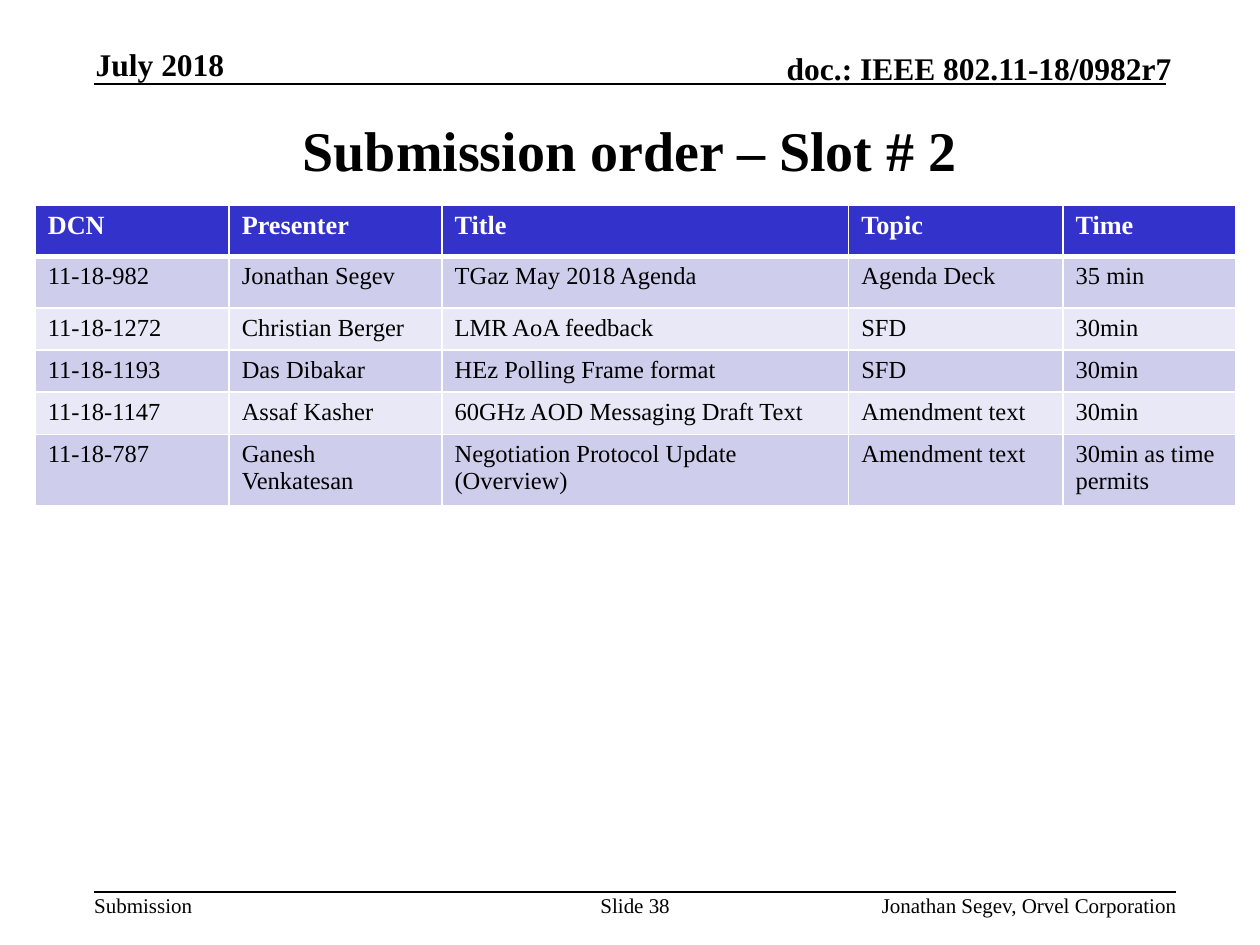
from lxml import etree
from pptx import Presentation
from pptx.dml.color import RGBColor
from pptx.enum.shapes import MSO_CONNECTOR
from pptx.enum.text import MSO_ANCHOR, MSO_AUTO_SIZE, PP_ALIGN
from pptx.oxml.ns import qn
from pptx.util import Cm, Pt

LEFT, CENTER, RIGHT = PP_ALIGN.LEFT, PP_ALIGN.CENTER, PP_ALIGN.RIGHT
TOP, MIDDLE, BOTTOM = MSO_ANCHOR.TOP, MSO_ANCHOR.MIDDLE, MSO_ANCHOR.BOTTOM
STRAIGHT = MSO_CONNECTOR.STRAIGHT
NO_AUTOFIT = MSO_AUTO_SIZE.NONE

FONT = "Times New Roman"
COLORS = {
    "text": "000000",
    "header_text": "FFFFFF",
    "header": "3333CC",
    "odd_row": "CECEEC",
    "even_row": "E8E8F6",
    "border": "FFFFFF",
}
COLUMN_WIDTHS = [3.91, 4.29, 8.2, 4.32, 3.48]
ROW_HEIGHTS = [1.04, 1.04, 0.8, 0.8, 0.8, 1.34]
SUBMISSIONS = [
    ["DCN", "Presenter", "Title", "Topic", "Time"],
    ["11-18-982", "Jonathan Segev", "TGaz May 2018 Agenda", "Agenda Deck", "35 min"],
    ["11-18-1272", "Christian Berger", "LMR AoA feedback", "SFD", "30min"],
    ["11-18-1193", "Das Dibakar", "HEz Polling Frame format", "SFD", "30min"],
    ["11-18-1147", "Assaf Kasher", "60GHz AOD Messaging Draft Text", "Amendment text", "30min"],
    ["11-18-787", "Ganesh Venkatesan", "Negotiation Protocol Update (Overview)",
     "Amendment text", "30min as time permits"],
]


def color(name):
    return RGBColor.from_string(COLORS[name])


def format_paragraph(paragraph, size, bold=False, alignment=LEFT, color_name="text"):
    paragraph.alignment = alignment
    font = paragraph.font
    font.name = FONT
    font.size = Pt(size)
    font.bold = bold
    font.color.rgb = color(color_name)


def add_rule(slide, left, top, right):
    connector = slide.shapes.add_connector(STRAIGHT, Cm(left), Cm(top), Cm(right), Cm(top))
    connector.line.color.rgb = color("text")
    connector.line.width = Pt(1)
    properties = connector._element.find(qn("p:spPr"))
    etree.SubElement(properties, qn("a:effectLst"))


def add_label(slide, text, box, size, bold=False, alignment=LEFT, anchor=TOP):
    label = slide.shapes.add_textbox(*map(Cm, box))
    frame = label.text_frame
    frame.margin_left = frame.margin_right = frame.margin_top = frame.margin_bottom = 0
    frame.word_wrap = True
    frame.vertical_anchor = anchor
    frame.text = text
    format_paragraph(frame.paragraphs[0], size, bold, alignment)


def set_title(slide, text):
    title = slide.shapes.title
    title.left, title.top, title.width, title.height = map(Cm, (1.9, 1.9, 21.6, 2.2))
    frame = title.text_frame
    frame.text = text
    frame.auto_size = NO_AUTOFIT
    frame.vertical_anchor = MIDDLE
    format_paragraph(frame.paragraphs[0], 32, True, CENTER)


def set_borders(cell, bottom_width):
    properties = cell._tc.get_or_add_tcPr()
    widths = {"a:lnL": 1, "a:lnR": 1, "a:lnT": 1, "a:lnB": bottom_width}
    for position, (tag, width) in enumerate(widths.items()):
        line = etree.Element(qn(tag), w=str(Pt(width)))
        fill = etree.SubElement(line, qn("a:solidFill"))
        etree.SubElement(fill, qn("a:srgbClr"), val=COLORS["border"])
        properties.insert(position, line)


def format_cell(cell, text, row_index):
    is_header = row_index == 0
    cell.text = text
    format_paragraph(
        cell.text_frame.paragraphs[0],
        size=15 if is_header else 14,
        bold=is_header,
        color_name="header_text" if is_header else "text",
    )
    band = "odd_row" if row_index % 2 else "even_row"
    cell.fill.solid()
    cell.fill.fore_color.rgb = color("header" if is_header else band)
    set_borders(cell, 3 if is_header else 1)


def add_submission_table(slide):
    frame = slide.shapes.add_table(
        len(SUBMISSIONS), len(COLUMN_WIDTHS), Cm(0.71), Cm(4.13),
        Cm(sum(COLUMN_WIDTHS)), Cm(sum(ROW_HEIGHTS)),
    )
    table = frame.table
    for column, width in zip(table.columns, COLUMN_WIDTHS):
        column.width = Cm(width)
    for row_index, (row, height) in enumerate(zip(table.rows, ROW_HEIGHTS)):
        row.height = Cm(height)
        for cell, text in zip(row.cells, SUBMISSIONS[row_index]):
            format_cell(cell, text, row_index)


def main():
    presentation = Presentation()
    presentation.slide_width, presentation.slide_height = Cm(25.4), Cm(19.05)
    slide = presentation.slides.add_slide(presentation.slide_layouts[5])

    add_rule(slide, 1.9, 1.7, 23.5)
    add_rule(slide, 1.9, 17.99, 23.7)
    add_label(slide, "July 2018", (1.93, 0.91, 5.2, 0.76), 18, True, anchor=BOTTOM)
    add_label(slide, "doc.: IEEE 802.11-18/0982r7", (13.9, 0.99, 9.72, 0.76),
              18, True, RIGHT, BOTTOM)
    add_label(slide, "Submission", (1.9, 17.99, 2.2, 0.5), 12)
    add_label(slide, "Slide 38", (12.07, 17.99, 1.47, 0.5), 12, alignment=CENTER)
    add_label(slide, "Jonathan Segev, Orvel Corporation", (14.88, 17.99, 8.84, 0.5),
              12, alignment=RIGHT)
    set_title(slide, "Submission order – Slot # 2")
    add_submission_table(slide)

    presentation.save("out.pptx")


if __name__ == "__main__":
    main()
